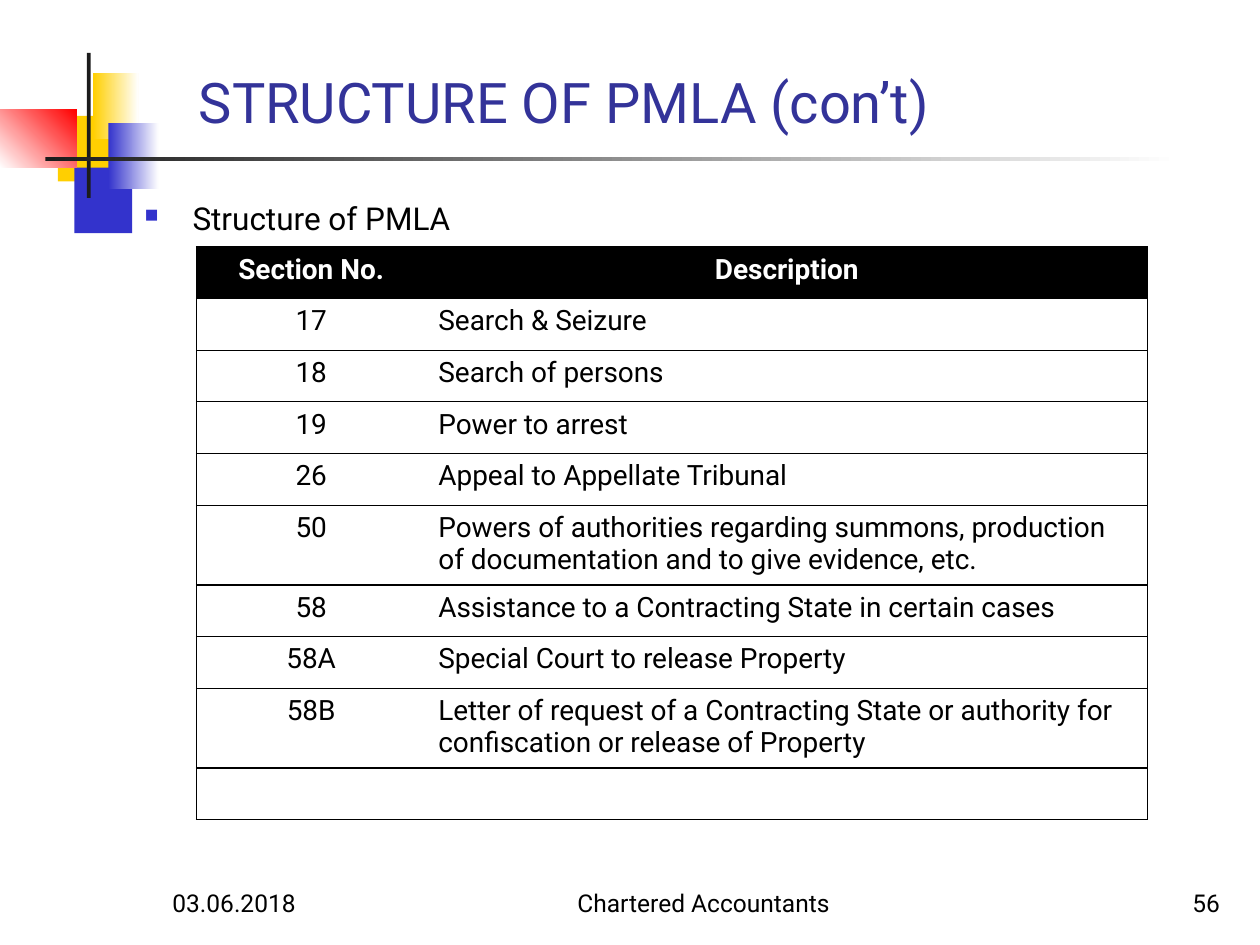
from lxml import etree
from pptx import Presentation
from pptx.dml.color import RGBColor
from pptx.enum.shapes import MSO_SHAPE
from pptx.enum.text import MSO_ANCHOR, PP_ALIGN
from pptx.oxml import parse_xml
from pptx.oxml.ns import nsdecls, qn
from pptx.util import Inches, Pt

RECT = MSO_SHAPE.RECTANGLE
TOP, BOTTOM = MSO_ANCHOR.TOP, MSO_ANCHOR.BOTTOM
LEFT, CENTER, RIGHT = PP_ALIGN.LEFT, PP_ALIGN.CENTER, PP_ALIGN.RIGHT

FONT = "Roboto"
NO_STYLE = "{2D5ABB26-0587-4C30-8999-92F81FD0307C}"
COLORS = {
    "black": "000000", "white": "FFFFFF", "yellow": "FFCF01", "blue": "3333CC",
    "red": "FF0000", "dark": "1C1C1C", "title": "333399",
}

# Content: decoration as (box, colours, gradient angle)
DECORATION = [
    ((0.46, 0.92, 0.48, 0.52), ["yellow"], 0),
    ((0.59, 1.33, 0.46, 0.52), ["blue"], 0),
    ((0.74, 0.58, 0.36, 0.52), ["yellow", "white"], 0),
    ((0.86, 0.98, 0.4, 0.52), ["blue", "white"], 0),
    ((0, 0.87, 0.61, 0.46), ["white", "red"], 45),
    ((0.69, 0.42, 0.03, 1.15), ["dark"], 0),
    ((0.36, 1.25, 9, 0.03), ["dark", "white"], 0),
]
# Text as (box, wording, size, colour, alignment, anchor)
TITLE = ((1.48, 0.5, 8.52, 0.62), "STRUCTURE OF PMLA (con’t)", 32, "title", LEFT, BOTTOM)
BODY = ((1.05, 1.53, 8.5, 0.42), "Structure of PMLA", 18, "black", LEFT, TOP)
FOOTER = [
    ((1.27, 6.83, 2.08, 0.5), "03.06.2018", 14, "black", LEFT, BOTTOM),
    ((4, 6.83, 3.17, 0.5), "Chartered Accountants", 14, "black", CENTER, BOTTOM),
    ((7.7, 6.83, 2.08, 0.5), "56", 14, "black", RIGHT, BOTTOM),
]
SECTIONS = [
    ("Section No.", "Description"),
    ("17", "Search & Seizure"),
    ("18", "Search of persons"),
    ("19", "Power to arrest"),
    ("26", "Appeal to Appellate Tribunal"),
    ("50", "Powers of authorities regarding summons, production of documentation "
           "and to give evidence, etc."),
    ("58", "Assistance to a Contracting State in certain cases"),
    ("58A", "Special Court to release Property"),
    ("58B", "Letter of request of a Contracting State or authority for "
            "confiscation or release of Property"),
    ("", ""),
]
TABLE_LEFT, TABLE_TOP = 1.56, 1.96
COL_WIDTHS = [1.82, 5.73]
ROW_HEIGHT, TALL_ROW_HEIGHT = 0.41, 0.61
LINE_CHARS = 60


def rgb(name):
    return RGBColor.from_string(COLORS[name])


def style(p, size, color, align, bold=False):
    p.alignment = align
    p.font.name, p.font.size, p.font.bold = FONT, Pt(size), bold
    p.font.color.rgb = rgb(color)


def add_block(slide, box, colors, angle):
    sp = slide.shapes.add_shape(RECT, *map(Inches, box))
    sp.shadow.inherit = False
    sp.line.fill.background()
    if len(colors) == 1:
        sp.fill.solid()
        sp.fill.fore_color.rgb = rgb(colors[0])
        return
    sp.fill.gradient()
    sp.fill.gradient_angle = angle
    for stop, color, position in zip(sp.fill.gradient_stops, colors, (0, 1)):
        stop.color.rgb = rgb(color)
        stop.position = position


def add_text(slide, box, text, size, color, align, anchor):
    tf = slide.shapes.add_textbox(*map(Inches, box)).text_frame
    tf.word_wrap = True
    tf.vertical_anchor = anchor
    p = tf.paragraphs[0]
    p.text = text
    style(p, size, color, align)
    return p


def add_bullet(p):
    pPr = p._p.get_or_add_pPr()
    pPr.set("marL", str(Inches(0.38)))
    pPr.set("indent", str(-Inches(0.38)))
    color = etree.Element(qn("a:buClr"))
    etree.SubElement(color, qn("a:srgbClr"), val=COLORS["blue"])
    size = etree.Element(qn("a:buSzPct"), val="60000")
    char = etree.Element(qn("a:buChar"), char="■")
    for position, part in enumerate((color, size, char)):
        pPr.insert(position, part)


def set_borders(cell, sides):
    tcPr = cell._tc.get_or_add_tcPr()
    for position, side in enumerate(sides):
        tcPr.insert(position, parse_xml(
            f'<a:ln{side} {nsdecls("a")} w="{Pt(0.75)}"><a:solidFill>'
            f'<a:srgbClr val="{COLORS["black"]}"/></a:solidFill></a:ln{side}>'))


def add_sections_table(slide):
    heights = [TALL_ROW_HEIGHT if len(text) > LINE_CHARS else ROW_HEIGHT
               for _, text in SECTIONS]
    table = slide.shapes.add_table(
        len(SECTIONS), len(COL_WIDTHS), Inches(TABLE_LEFT), Inches(TABLE_TOP),
        Inches(sum(COL_WIDTHS)), Inches(sum(heights))).table
    table.horz_banding = False
    table._tbl.tblPr.find(qn("a:tableStyleId")).text = NO_STYLE
    for column, width in zip(table.columns, COL_WIDTHS):
        column.width = Inches(width)
    for i, (row, height) in enumerate(zip(table.rows, heights)):
        row.height = Inches(height)
        header = i == 0
        for j, cell in enumerate(row.cells):
            cell.fill.solid()
            cell.fill.fore_color.rgb = rgb("black" if header else "white")
            set_borders(cell, "RTB" if j else "LTB")
            p = cell.text_frame.paragraphs[0]
            p.text = SECTIONS[i][j]
            style(p, 16, "white" if header else "black",
                  CENTER if header or j == 0 else LEFT, header)


def main():
    prs = Presentation()
    prs.slide_width, prs.slide_height = Inches(10), Inches(7.5)
    slide = prs.slides.add_slide(prs.slide_layouts[6])

    # Corner decoration and title rule
    for block in DECORATION:
        add_block(slide, *block)

    # Title, bullet and footer
    add_text(slide, *TITLE)
    add_bullet(add_text(slide, *BODY))
    for item in FOOTER:
        add_text(slide, *item)

    # Table of sections
    add_sections_table(slide)
    prs.save("out.pptx")


if __name__ == "__main__":
    main()
